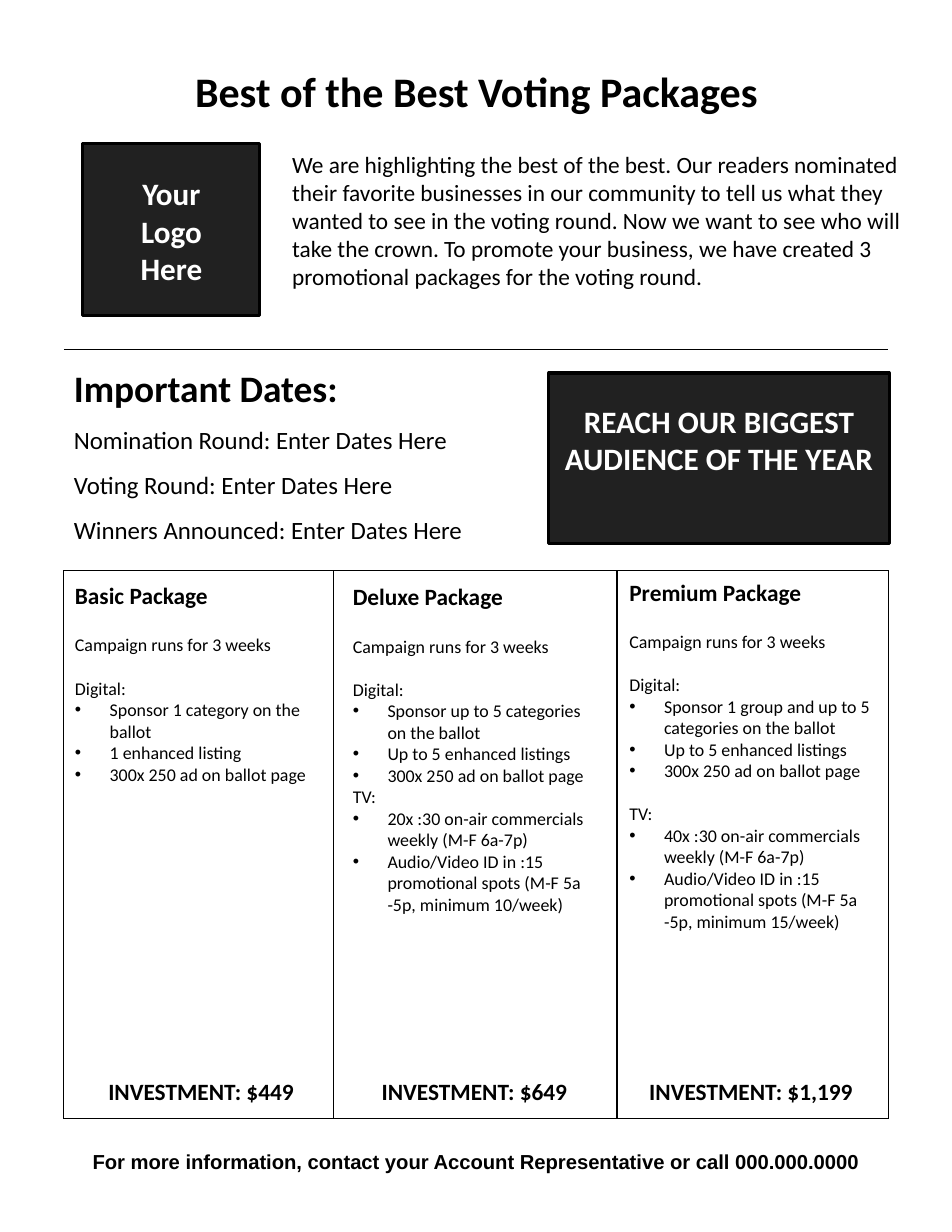
from pptx import Presentation
from pptx.dml.color import RGBColor
from pptx.enum.shapes import MSO_CONNECTOR as Connector, MSO_SHAPE as Shape
from pptx.enum.text import MSO_ANCHOR as Anchor, MSO_AUTO_SIZE as AutoSize, PP_ALIGN as Align
from pptx.oxml.ns import qn
from pptx.util import Pt
from lxml.etree import SubElement

BLACK = RGBColor(0x00, 0x00, 0x00)
CHARCOAL = RGBColor(0x21, 0x21, 0x21)
WHITE = RGBColor(0xFF, 0xFF, 0xFF)

INSET = 7.2
INDENT = 22.3
LEFT, RIGHT = 41, 571
TABLE_TOP, TABLE_BOTTOM = 366.5, 719.3
COLUMN_EDGES = (LEFT, 214.2, 396.7, RIGHT)
CARD_WIDTH = 173.5
HEADING_GAP, SECTION_GAP = 15.9, 14

# Each package: name, left, top, height, price left, price, sections.
# Each section: space before it, label, bullets.
PACKAGES = [
    ("Basic Package", 41, 366.5, 265.7, 42.5, "$449", [
        (SECTION_GAP, "Digital:", [
            "Sponsor 1 category on the ballot",
            "1 enhanced listing",
            "300x 250 ad on ballot page"])]),
    ("Deluxe Package", 219.6, 367.2, 321, 218.2, "$649", [
        (SECTION_GAP, "Digital:", [
            "Sponsor up to 5 categories on the ballot",
            "Up to 5 enhanced listings",
            "300x 250 ad on ballot page"]),
        (0, "TV:", [
            "20x :30 on-air commercials weekly (M-F 6a-7p)",
            "Audio/Video ID in :15 promotional spots (M-F 5a -5p, minimum 10/week)"])]),
    ("Premium Package", 397.4, 364.3, 321, 396, "$1,199", [
        (SECTION_GAP, "Digital:", [
            "Sponsor 1 group and up to 5 categories on the ballot",
            "Up to 5 enhanced listings",
            "300x 250 ad on ballot page"]),
        (SECTION_GAP, "TV:", [
            "40x :30 on-air commercials weekly (M-F 6a-7p)",
            "Audio/Video ID in :15 promotional spots (M-F 5a -5p, minimum 15/week)"])]),
]


def place(box, left, top, width, height):
    box.left, box.top, box.width, box.height = map(Pt, (left, top, width, height))


def prepare_frame(box, top_inset=INSET):
    frame = box.text_frame
    frame.word_wrap = True
    frame.auto_size = AutoSize.NONE
    frame.vertical_anchor = Anchor.TOP
    frame.margin_left = frame.margin_right = frame.margin_bottom = Pt(INSET)
    frame.margin_top = Pt(top_inset)
    return frame


def write(frame, text, size, bold=False, align=Align.LEFT, color=BLACK,
          font="Calibri", bullet=False, before=0, spacing=1.0):
    """Fill the frame's empty first paragraph, or add the next one."""
    para = frame.paragraphs[-1]
    if para.text:
        para = frame.add_paragraph()
    properties = para._p.get_or_add_pPr()
    indent = Pt(INDENT) if bullet else 0
    properties.set("marL", str(indent))
    properties.set("indent", str(-indent))
    if bullet:
        SubElement(properties, qn("a:buChar"), char="•")
    else:
        SubElement(properties, qn("a:buNone"))
    para.text = text
    para.alignment = align
    para.space_before = Pt(before)
    para.line_spacing = spacing
    para.font.name, para.font.size, para.font.bold = font, Pt(size), bold
    para.font.color.rgb = color


def add_text(page, bounds, text, size, **style):
    box = page.shapes.add_textbox(*map(Pt, bounds))
    write(prepare_frame(box), text, size, **style)


def add_panel(page, bounds, lines, top_inset):
    panel = page.shapes.add_shape(Shape.RECTANGLE, *map(Pt, bounds))
    panel.shadow.inherit = False
    panel.fill.solid()
    panel.fill.fore_color.rgb = CHARCOAL
    panel.line.color.rgb = BLACK
    panel.line.width = Pt(2)
    frame = prepare_frame(panel, top_inset)
    for line in lines:
        write(frame, line, 20, bold=True, align=Align.CENTER, color=WHITE)


def add_rule(page, start_x, start_y, end_x, end_y):
    rule = page.shapes.add_connector(
        Connector.STRAIGHT, *map(Pt, (start_x, start_y, end_x, end_y)))
    rule.line.color.rgb = BLACK
    rule.line.width = Pt(0.75)
    SubElement(rule._element.spPr, qn("a:effectLst"))


def fill_package(page, body, package):
    name, left, top, height, price_left, price, sections = package
    place(body, left, top, CARD_WIDTH, height)
    frame = prepare_frame(body)
    write(frame, name, 15, bold=True)
    write(frame, "Campaign runs for 3 weeks", 11.5, before=HEADING_GAP)
    for gap, label, items in sections:
        write(frame, label, 11.5, before=gap)
        for item in items:
            write(frame, item, 11.5, bullet=True)
    add_text(page, (price_left, 685.4, CARD_WIDTH, 28.8), f"INVESTMENT: {price}", 15,
             bold=True, align=Align.CENTER)


def main():
    deck = Presentation()
    deck.slide_width, deck.slide_height = Pt(612), Pt(792)
    # The comparison layout has a title and four bodies
    page = deck.slides.add_slide(deck.slide_layouts[4])
    title, dates, *cards = list(page.placeholders)[:5]

    # Title and introduction
    place(title, LEFT, 34.6, 530.6, 48.2)
    write(prepare_frame(title), "Best of the Best Voting Packages", 27,
          bold=True, align=Align.CENTER)
    add_panel(page, (53.3, 92.2, 113.8, 110.9), ("Your", "Logo", "Here"), 20.2)
    add_text(page, (180.7, 89.3, 406.8, 116.6),
             "We are highlighting the best of the best. Our readers nominated their "
             "favorite businesses in our community to tell us what they wanted to see "
             "in the voting round. Now we want to see who will take the crown. To "
             "promote your business, we have created 3 promotional packages for the "
             "voting round.", 15)
    add_rule(page, LEFT, 224.6, RIGHT, 224.6)

    # Dates and banner
    place(dates, 40.3, 227.5, 385.2, 109.4)
    frame = prepare_frame(dates)
    write(frame, "Important Dates:", 24, bold=True)
    for event in ("Nomination Round", "Voting Round", "Winners Announced"):
        write(frame, f"{event}: Enter Dates Here", 16, spacing=1.5)
    add_panel(page, (352.8, 239.8, 218.9, 109.4),
              ["REACH OUR BIGGEST AUDIENCE OF THE YEAR"], 18.7)

    # Package grid
    for y in (TABLE_TOP, TABLE_BOTTOM):
        add_rule(page, LEFT, y, RIGHT, y)
    for x in COLUMN_EDGES:
        add_rule(page, x, TABLE_TOP, x, TABLE_BOTTOM)
    for body, package in zip(cards, PACKAGES):
        fill_package(page, body, package)

    # Contact line
    add_text(page, (40.3, 731.5, 530.6, 28.8),
             "For more information, contact your Account Representative or call "
             "000.000.0000", 13, bold=True, align=Align.CENTER, font="Arial")

    deck.save("out.pptx")


if __name__ == "__main__":
    main()
